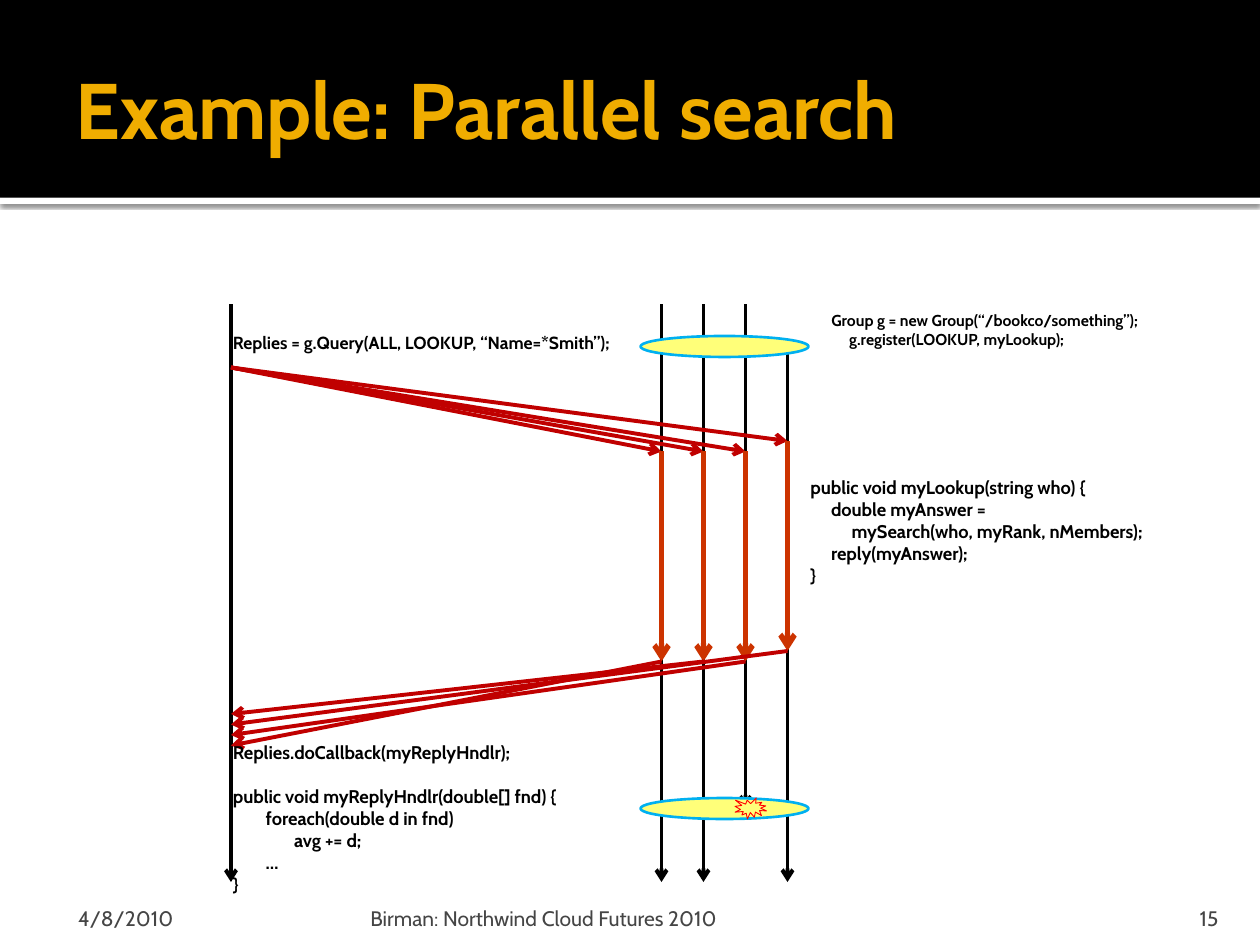
"""Build the slide that shows a parallel search over a process group."""
from lxml.etree import SubElement
from pptx import Presentation
from pptx.dml.color import RGBColor
from pptx.enum.shapes import MSO_CONNECTOR, MSO_SHAPE
from pptx.enum.text import MSO_ANCHOR, PP_ALIGN
from pptx.oxml.ns import qn
from pptx.util import Pt

HUES = {"black": "000000", "white": "FFFFFF", "gold": "F0AD00", "red": "C00000",
        "rust": "CC3300", "pale": "FFFF79", "sky": "00B0F0", "flame": "FF0000",
        "gray": "454545"}
HUES = {name: RGBColor.from_string(code) for name, code in HUES.items()}


def draw(kind, box, fill, line=None, width=0):
    shape = slide.shapes.add_shape(kind, *map(Pt, box))
    shape.shadow.inherit = False
    shape.fill.solid()
    shape.fill.fore_color.rgb = HUES[fill]
    if line:
        shape.line.color.rgb = HUES[line]
        shape.line.width = Pt(width)
    else:
        shape.line.fill.background()
    return shape


def write(shape, rows, size, hue, bold=True, align=PP_ALIGN.LEFT, **frame):
    text = shape.text_frame
    text.word_wrap = True
    for name, value in frame.items():
        setattr(text, name, value)
    for i, (words, indent, gap) in enumerate(rows):
        para = text.paragraphs[0] if i == 0 else text.add_paragraph()
        para.alignment = align
        para.space_before = Pt(gap)
        props = para._p.get_or_add_pPr()
        props.set("marL", str(Pt(indent)))
        props.set("indent", "0")
        run = para.add_run()
        run.text = words
        look = {"name": "Cabin", "size": Pt(size), "bold": bold}
        for name, value in look.items():
            setattr(run.font, name, value)
        run.font.color.rgb = HUES[hue]


deck = Presentation()
deck.slide_width, deck.slide_height = Pt(720), Pt(540)
slide = deck.slides.add_slide(deck.slide_layouts[5])

strip = draw(MSO_SHAPE.RECTANGLE, (0, 113, 720, 3.6), "white")
glow = SubElement(strip.element.spPr.find(qn("a:effectLst")), qn("a:outerShdw"),
                  blurRad=str(Pt(2.5)), dist=str(Pt(0.8)), dir="5400000")
shade = SubElement(glow, qn("a:srgbClr"), val=str(HUES["black"]))
SubElement(shade, qn("a:alpha"), val="60000")
draw(MSO_SHAPE.RECTANGLE, (0, 0, 720, 113), "black")

title = slide.shapes.title
title.element.getparent().append(title.element)
place = {"left": 36, "top": 12.24, "width": 648, "height": 98.64}
for name, value in place.items():
    setattr(title, name, Pt(value))
write(title, [("Example: Parallel search", 0, 0)], 45, "gold",
      vertical_anchor=MSO_ANCHOR.MIDDLE, margin_left=Pt(7.2), margin_right=Pt(3.6),
      margin_top=Pt(3.6), margin_bottom=Pt(3.6))

caller = 132
peers = [378, 402, 426, 450]
starts = [174, 174, 174, 198]
ends = [504, 504, 462, 504]
calls = [258, 258, 258, 252]
dones = [378, 378, 378, 372]
backs = [426, 408, 420, 414]
arrows = [(caller, 174, caller, 504, "black", 2.25)]
arrows += [(x, a, x, b, "black", 2.25) for x, a, b in zip(peers, starts, ends)]
arrows += [(caller, 210, x, y, "red", 2.25) for x, y in zip(peers, calls)]
arrows += [(x, a, x, b, "rust", 3) for x, a, b in zip(peers, calls, dones)]
arrows += [(x, a, caller, b, "red", 2.25) for x, a, b in zip(peers, dones, backs)]
for *ends, hue, width in arrows:
    arrow = slide.shapes.add_connector(MSO_CONNECTOR.STRAIGHT, *map(Pt, ends))
    arrow.line.color.rgb = HUES[hue]
    arrow.line.width = Pt(width)
    SubElement(arrow.line._get_or_add_ln(), qn("a:tailEnd"), type="arrow")
    SubElement(arrow.element.spPr, qn("a:effectLst"))

for top in (192, 456):
    draw(MSO_SHAPE.OVAL, (366, top, 96, 12), "pale", "sky", 1.5)
draw(MSO_SHAPE.EXPLOSION1, (420, 456, 18, 12), "pale", "flame", 0.5)

codes = [
    ((90, 186, 360, 19.5), 10,
     [("Replies = g.Query(ALL, LOOKUP, “Name=*Smith”);", 36, 0)]),
    ((90, 420, 360, 108.7), 10.5,
     [("Replies.doCallback(myReplyHndlr);", 36, 0),
      ("public void myReplyHndlr(double[] fnd) {", 36, 12.6),
      ("foreach(double d in fnd)", 54.8, 0),
      ("avg += d;", 71, 0),
      ("…", 54.8, 0),
      ("}", 36, 0)]),
    ((456, 268.6, 252, 70.5), 10.5,
     [("public void myLookup(string who) {", 0, 0),
      ("double myAnswer =", 11.8, 0),
      ("mySearch(who, myRank, nMembers);", 23.6, 0),
      ("reply(myAnswer);", 11.8, 0),
      ("}", 0, 0)]),
    ((468, 174, 252, 28.8), 9,
     [("Group g = new Group(“/bookco/something”);", 0, 0),
      ("g.register(LOOKUP, myLookup);", 10.2, 0)]),
]
for box, size, rows in codes:
    write(slide.shapes.add_textbox(*map(Pt, box)), rows, size, "black")

feet = [
    (36, 168, 8.64, 3.6, PP_ALIGN.LEFT, "4/8/2010"),
    (645.8, 57.6, 7.2, 7.2, PP_ALIGN.RIGHT, "15"),
    (208, 433.4, 3.6, 3.6, PP_ALIGN.LEFT, "Birman: Northwind Cloud Futures 2010"),
]
for left, width, near, far, align, words in feet:
    foot = slide.shapes.add_textbox(Pt(left), Pt(510), Pt(width), Pt(21.6))
    write(foot, [(words, 0, 0)], 12, "gray", False, align,
          vertical_anchor=MSO_ANCHOR.BOTTOM, margin_left=Pt(near),
          margin_right=Pt(far), margin_top=Pt(3.6), margin_bottom=0)

deck.save("out.pptx")
